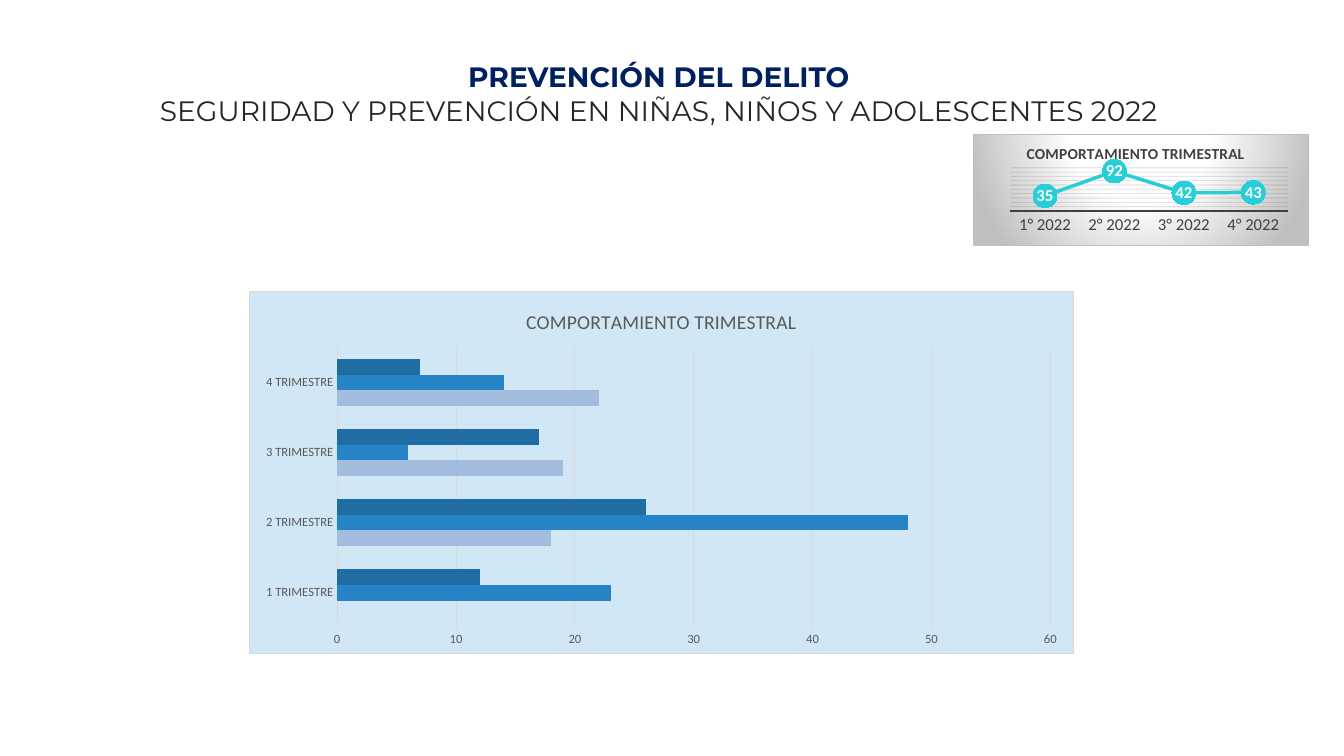
import pptx
import pptx.chart.data
import pptx.dml.color
import pptx.enum.chart
import pptx.enum.text
import pptx.oxml
import pptx.oxml.ns
import pptx.util
from pptx.util import Inches

RGBColor = pptx.dml.color.RGBColor
ChartType = pptx.enum.chart.XL_CHART_TYPE
TickMark = pptx.enum.chart.XL_TICK_MARK
qn = pptx.oxml.ns.qn

NAVY = RGBColor(0x00, 0x20, 0x60)
INK = RGBColor(0x26, 0x26, 0x26)
DARK_GRAY = RGBColor(0x40, 0x40, 0x40)
GRAY = RGBColor(0x59, 0x59, 0x59)
SILVER = RGBColor(0xBF, 0xBF, 0xBF)
LIGHT_GRAY = RGBColor(0xD9, 0xD9, 0xD9)
NEAR_BLACK = RGBColor(0x0D, 0x0D, 0x0D)
WHITE = RGBColor(0xFF, 0xFF, 0xFF)
TURQUOISE = RGBColor(0x27, 0xCE, 0xD7)
PALE_BLUE = RGBColor(0xD1, 0xE7, 0xF6)
BAR_COLORS = (RGBColor(0xA3, 0xBB, 0xDC), RGBColor(0x26, 0x83, 0xC6),
              RGBColor(0x20, 0x6D, 0xA4))

CHART_TITLE = "COMPORTAMIENTO TRIMESTRAL"


def solid(color):
    return f'<a:solidFill><a:srgbClr val="{color}"/></a:solidFill>'


def radial(stops, left, top, right, bottom):
    marks = "".join(f'<a:gs pos="{position * 1000}"><a:srgbClr val="{color}"/></a:gs>'
                    for position, color in stops)
    return (f'<a:gradFill><a:gsLst>{marks}</a:gsLst><a:path path="circle">'
            f'<a:fillToRect l="{left * 1000}" t="{top * 1000}" r="{right * 1000}" '
            f'b="{bottom * 1000}"/></a:path></a:gradFill>')


class SlideBuilder:
    heading_font = "Montserrat"
    chart_font = "Calibri"

    def __init__(self, slide):
        self.slide = slide

    def style_font(self, font, size, color, bold=False, name=chart_font):
        font.name, font.size, font.bold = name, pptx.util.Pt(size), bold
        font.color.rgb = color

    def style_line(self, line, color, width):
        line.color.rgb = color
        line.width = pptx.util.Pt(width)

    def heading(self, left, top, width, height, lines):
        title = self.slide.shapes.title
        title.left, title.top, title.width, title.height = map(
            Inches, (left, top, width, height))
        frame = title.text_frame
        frame.text = "\n".join(text for text, color, bold in lines)
        frame.word_wrap = True
        frame.auto_size = pptx.enum.text.MSO_AUTO_SIZE.NONE
        frame.vertical_anchor = pptx.enum.text.MSO_ANCHOR.MIDDLE
        for paragraph, (text, color, bold) in zip(frame.paragraphs, lines):
            paragraph.alignment = pptx.enum.text.PP_ALIGN.CENTER
            self.style_font(paragraph.font, 20, color, bold, self.heading_font)

    def chart(self, kind, box, categories, series_values, title_style, fill, border):
        data = pptx.chart.data.CategoryChartData()
        data.categories = categories
        for number, values in enumerate(series_values, 1):
            data.add_series(f"Series {number}", values)
        chart = self.slide.shapes.add_chart(kind, *map(Inches, box), data).chart
        chart.has_legend = False
        chart.font.name, chart.font.size = self.chart_font, pptx.util.Pt(10)
        chart.has_title = True
        frame = chart.chart_title.text_frame
        frame.text = CHART_TITLE
        self.style_font(frame.paragraphs[0].font, *title_style)
        chart.plots[0].vary_by_categories = False
        self.chart_area(chart.element, fill, border)
        return chart

    def chart_area(self, space, fill, border):
        """Background and border of the whole chart, with square corners."""
        namespaces = pptx.oxml.ns.nsdecls("c", "a")
        space.find(qn("c:chart")).addnext(pptx.oxml.parse_xml(
            f'<c:spPr {namespaces}>{fill}<a:ln w="9525">{solid(border)}</a:ln></c:spPr>'))
        if space.find(qn("c:roundedCorners")) is None:
            space.find(qn("c:date1904")).addnext(pptx.oxml.parse_xml(
                f'<c:roundedCorners {namespaces} val="0"/>'))

    def place(self, element, index, target="", **fractions):
        """Fix a chart part at fractions of the chart size."""
        for layout in element.findall(qn("c:layout")):
            element.remove(layout)
        modes = "".join(f'<c:{axis}Mode val="edge"/>' for axis in "xy")
        values = "".join(f'<c:{key} val="{value}"/>' for key, value in fractions.items())
        element.insert(index, pptx.oxml.parse_xml(
            f'<c:layout {pptx.oxml.ns.nsdecls("c")}><c:manualLayout>'
            f'{target}{modes}{values}</c:manualLayout></c:layout>'))

    def axis(self, axis, size, color):
        axis.major_tick_mark = axis.minor_tick_mark = TickMark.NONE
        self.style_font(axis.tick_labels.font, size, color)

    def trend_chart(self, box, categories, values):
        fill = radial([(0, WHITE), (39, WHITE), (100, SILVER)], 50, -80, 50, 180)
        chart = self.chart(ChartType.LINE_MARKERS, box, categories, [values],
                           (11, DARK_GRAY, True), fill, SILVER)
        self.place(chart.chart_title.element, 1, x=0.15, y=0.05)
        self.place(chart.element.find(".//" + qn("c:plotArea")), 0,
                   '<c:layoutTarget val="inner"/>', x=0.11, y=0.3, w=0.83, h=0.39)

        # Axes and faint gridlines
        self.axis(chart.category_axis, 12, DARK_GRAY)
        self.style_line(chart.category_axis.format.line, DARK_GRAY, 1.5)
        scale = chart.value_axis
        scale.minimum_scale, scale.maximum_scale, scale.major_unit = 0, 100, 10
        scale.visible = False
        self.style_line(scale.major_gridlines.format.line, NEAR_BLACK, 0.75)
        color = chart.element.find(f'.//{qn("c:majorGridlines")}//{qn("a:srgbClr")}')
        color.append(pptx.oxml.parse_xml(
            f'<a:alpha {pptx.oxml.ns.nsdecls("a")} val="10000"/>'))

        # Line, round markers and centred values
        series = chart.plots[0].series[0]
        series.smooth = False
        self.style_line(series.format.line, TURQUOISE, 2.5)
        marker = series.marker
        marker.style, marker.size = pptx.enum.chart.XL_MARKER_STYLE.CIRCLE, 17
        marker.format.fill.solid()
        marker.format.fill.fore_color.rgb = TURQUOISE
        marker.format.line.fill.background()
        labels = series.data_labels
        labels.show_value = True
        labels.position = pptx.enum.chart.XL_LABEL_POSITION.CENTER
        self.style_font(labels.font, 12, WHITE, True)

    def bar_chart(self, box, categories, series_values):
        chart = self.chart(ChartType.BAR_CLUSTERED, box, categories, series_values,
                           (14, GRAY), solid(PALE_BLUE), LIGHT_GRAY)
        for axis in (chart.category_axis, chart.value_axis):
            self.axis(axis, 9, GRAY)
            axis.format.line.fill.background()
        self.style_line(chart.value_axis.major_gridlines.format.line, LIGHT_GRAY, 0.75)
        plot = chart.plots[0]
        plot.gap_width, plot.overlap = 150, 0
        for series, color in zip(plot.series, BAR_COLORS):
            series.format.fill.solid()
            series.format.fill.fore_color.rgb = color


def main():
    presentation = pptx.Presentation()
    presentation.slide_width = Inches(13.33)
    presentation.slide_height = Inches(7.5)
    title_only = presentation.slide_layouts[5]
    builder = SlideBuilder(presentation.slides.add_slide(title_only))

    # Heading
    builder.heading(0, 0.51, 13.07, 0.83, [
        ("PREVENCIÓN DEL DELITO", NAVY, True),
        ("SEGURIDAD Y PREVENCIÓN EN NIÑAS, NIÑOS Y ADOLESCENTES 2022", INK, False)])

    # Quarterly totals
    quarters = range(1, 5)
    builder.trend_chart((9.65, 1.33, 3.33, 1.11),
                        [f"{quarter}° 2022" for quarter in quarters], (35, 92, 42, 43))

    # Quarterly breakdown
    builder.bar_chart((2.47, 2.89, 8.18, 3.6),
                      [f"{quarter} TRIMESTRE" for quarter in quarters],
                      [(0, 18, 19, 22), (23, 48, 6, 14), (12, 26, 17, 7)])

    presentation.save("out.pptx")


if __name__ == "__main__":
    main()
